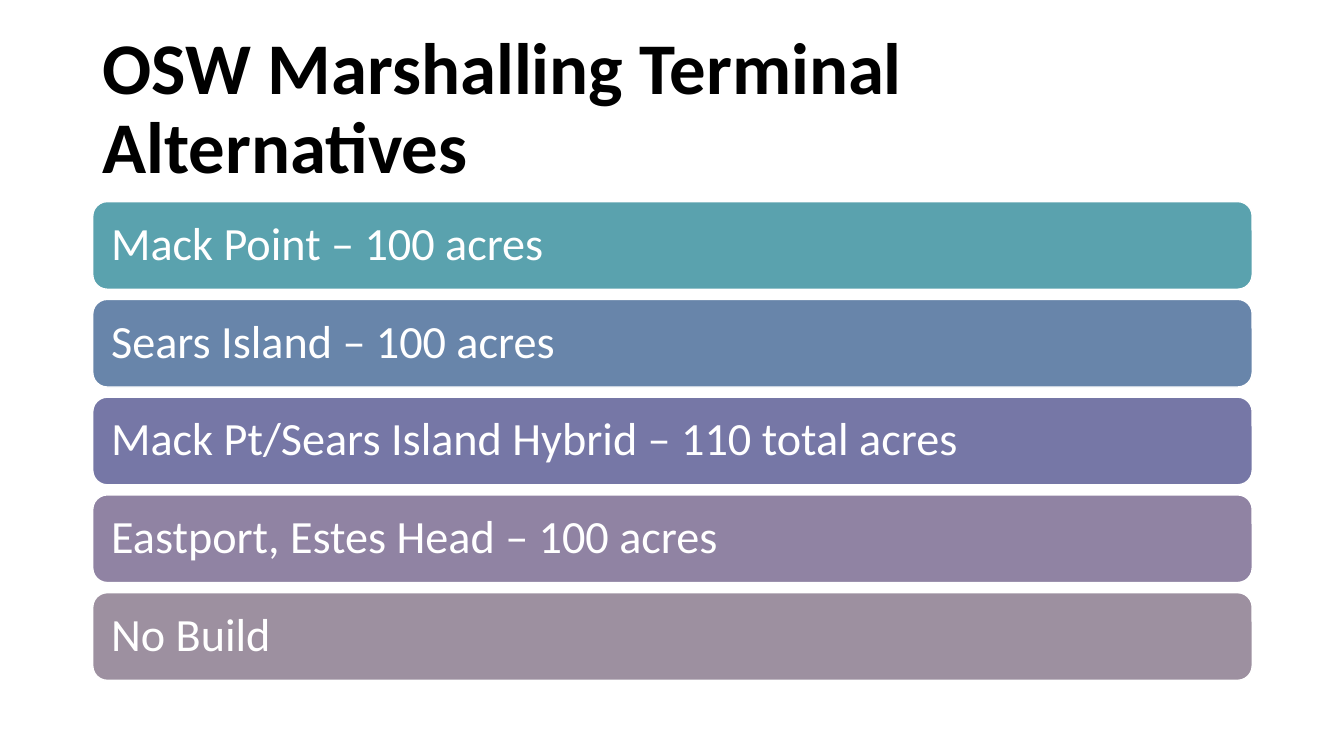
from pptx import Presentation
from pptx.dml.color import RGBColor
from pptx.enum.shapes import MSO_SHAPE
from pptx.enum.text import MSO_ANCHOR, PP_ALIGN
from pptx.util import Inches, Pt

TITLE = "OSW Marshalling Terminal Alternatives"
ALTERNATIVES = [
    ("Mack Point – 100 acres", RGBColor(0x5A, 0xA2, 0xAE)),
    ("Sears Island – 100 acres", RGBColor(0x68, 0x85, 0xAA)),
    ("Mack Pt/Sears Island Hybrid – 110 total acres", RGBColor(0x76, 0x77, 0xA6)),
    ("Eastport, Estes Head – 100 acres", RGBColor(0x90, 0x83, 0xA3)),
    ("No Build", RGBColor(0x9D, 0x90, 0xA0)),
]
BLACK = RGBColor(0, 0, 0)
WHITE = RGBColor(0xFF, 0xFF, 0xFF)

LEFT, WIDTH = 0.92, 11.5
TITLE_TOP, TITLE_HEIGHT = 0.34, 1.51
BARS_TOP, BAR_HEIGHT, BAR_STEP = 2, 0.87, 0.97


def write(shape, text, size, color, bold=False, inset=0.1):
    frame = shape.text_frame
    frame.word_wrap = True
    frame.vertical_anchor = MSO_ANCHOR.MIDDLE
    frame.margin_left = frame.margin_right = Inches(inset)
    frame.margin_top = frame.margin_bottom = Inches(0.05)
    paragraph = frame.paragraphs[0]
    paragraph.alignment = PP_ALIGN.LEFT
    paragraph.line_spacing = 0.9
    run = paragraph.add_run()
    run.text = text
    run.font.name = "Calibri"
    run.font.size = Pt(size)
    run.font.bold = bold
    run.font.color.rgb = color


def main():
    prs = Presentation()
    prs.slide_width, prs.slide_height = Inches(13.33), Inches(7.5)
    slide = prs.slides.add_slide(prs.slide_layouts[6])

    title = slide.shapes.add_textbox(
        Inches(LEFT), Inches(TITLE_TOP), Inches(WIDTH), Inches(TITLE_HEIGHT))
    write(title, TITLE, size=52, color=BLACK, bold=True)

    for row, (alternative, color) in enumerate(ALTERNATIVES):
        bar = slide.shapes.add_shape(
            MSO_SHAPE.ROUNDED_RECTANGLE, Inches(LEFT),
            Inches(BARS_TOP + row * BAR_STEP), Inches(WIDTH), Inches(BAR_HEIGHT))
        bar.shadow.inherit = False
        bar.fill.solid()
        bar.fill.fore_color.rgb = color
        bar.line.color.rgb = WHITE
        bar.line.width = Pt(1)
        # The rounded corners already inset the text by about 0.04 inch.
        write(bar, alternative, size=33, color=WHITE, inset=0.14)

    prs.save("out.pptx")


if __name__ == "__main__":
    main()
